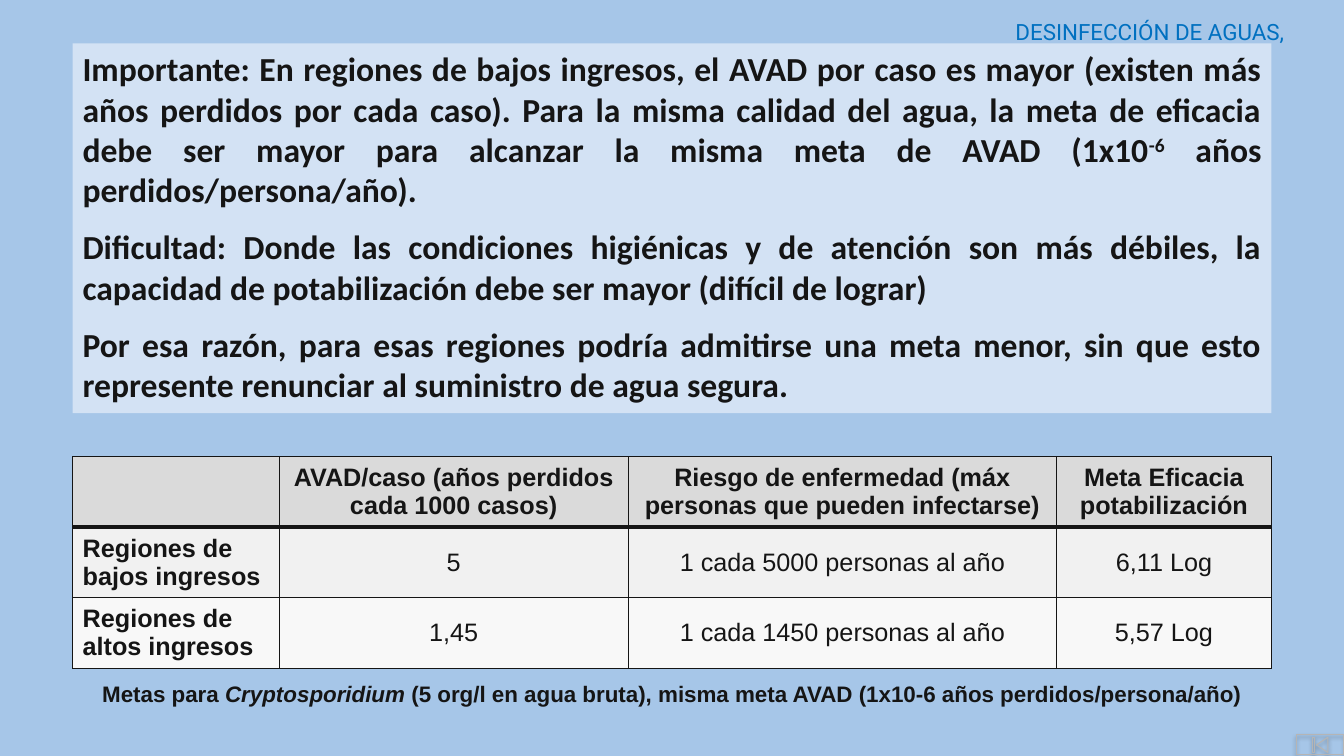
import pptx
import pptx.util
import pptx.dml.color
import pptx.enum.shapes
import pptx.enum.text
import pptx.oxml
import pptx.oxml.ns

Inches, Pt = pptx.util.Inches, pptx.util.Pt
ALIGN = pptx.enum.text.PP_ALIGN
MIDDLE = pptx.enum.text.MSO_ANCHOR.MIDDLE
SHAPE = pptx.enum.shapes.MSO_SHAPE
INK = "151515"
LEFT, WIDE = 0.72, 11.89

NOTES = [
    [("Importante: En regiones de bajos ingresos, el AVAD por caso es mayor "
      "(existen más años perdidos por cada caso). Para la misma calidad del agua, "
      "la meta de eficacia debe ser mayor para alcanzar la misma meta de AVAD (1x10", False),
     ("-6", True), (" años perdidos/persona/año).", False)],
    [("Dificultad: Donde las condiciones higiénicas y de atención son más débiles, "
      "la capacidad de potabilización debe ser mayor (difícil de lograr)", False)],
    [("Por esa razón, para esas regiones podría admitirse una meta menor, "
      "sin que esto represente renunciar al suministro de agua segura.", False)],
]
GOALS = [
    ["", "AVAD/caso (años perdidos cada 1000 casos)",
     "Riesgo de enfermedad (máx personas que pueden infectarse)",
     "Meta Eficacia potabilización"],
    ["Regiones de bajos ingresos", "5", "1 cada 5000 personas al año", "6,11 Log"],
    ["Regiones de altos ingresos", "1,45", "1 cada 1450 personas al año", "5,57 Log"],
]
COLS = [2.05, 3.46, 4.25, 2.13]
FILLS = ["DADADA", "F1F1F1", "F8F8F8"]
EDGES = [1, 3, 1, 1]  # horizontal rules, top to bottom


def color(code):
    return pptx.dml.color.RGBColor.from_string(code)


def paint(fill, code):
    fill.solid()
    fill.fore_color.rgb = color(code)


def add_run(para, text, size, face, code=INK, bold=False, italic=False):
    run = para.add_run()
    run.text = text
    font = run.font
    font.size, font.name, font.bold, font.italic = Pt(size), face, bold, italic
    font.color.rgb = color(code)
    return run


def add_line(slide, left, top, width, height):
    """Add a text box and return its centred first paragraph."""
    box = slide.shapes.add_textbox(*map(Inches, (left, top, width, height)))
    box.text_frame.word_wrap = True
    para = box.text_frame.paragraphs[0]
    para.alignment = ALIGN.CENTER
    return para


def add_header(slide, left, top, width, height):
    para = add_line(slide, left, top, width, height)
    add_run(para, "DESINFECCIÓN DE AGUAS,", 16, "Roboto", "0070C0")


def add_button(slide, left, top, width, height):
    shape = slide.shapes.add_shape(SHAPE.ACTION_BUTTON_BEGINNING,
                                   *map(Inches, (left, top, width, height)))
    shape.fill.background()
    shape.line.color.rgb = color("B5B5B5")
    shape.line.width = Pt(0.75)
    # Soft shadow below
    shape.shadow.inherit = False
    effects = shape.element.spPr.find(pptx.oxml.ns.qn("a:effectLst"))
    effects.append(pptx.oxml.parse_xml(
        f'<a:outerShdw {pptx.oxml.ns.nsdecls("a")} blurRad="{Pt(3.1)}" dist="{Pt(1.6)}" '
        'dir="5400000" rotWithShape="0"><a:srgbClr val="000000"><a:alpha val="38000"/>'
        '</a:srgbClr></a:outerShdw>'))


def add_panel(slide, left, top, width, height):
    shape = slide.shapes.add_shape(SHAPE.RECTANGLE,
                                   *map(Inches, (left, top, width, height)))
    shape.shadow.inherit = False
    paint(shape.fill, "D3E2F4")
    shape.line.fill.background()
    frame = shape.text_frame
    frame.word_wrap = True
    frame.vertical_anchor = pptx.enum.text.MSO_ANCHOR.TOP
    for i, note in enumerate(NOTES):
        para = frame.add_paragraph() if i else frame.paragraphs[0]
        para.alignment = ALIGN.JUSTIFY
        para.space_before = Pt(6 if i else 0)
        para.space_after = Pt(6)
        for text, raised in note:
            run = add_run(para, text, 24, "Calibri", bold=True)
            if raised:
                run.font._element.set("baseline", "30000")


def set_edges(cell, above, below):
    props = cell._tc.get_or_add_tcPr()
    for i, (side, width) in enumerate(zip("LRTB", (1, 1, above, below))):
        props.insert(i, pptx.oxml.parse_xml(
            f'<a:ln{side} {pptx.oxml.ns.nsdecls("a")} w="{Pt(width)}"><a:solidFill>'
            f'<a:srgbClr val="{INK}"/></a:solidFill></a:ln{side}>'))


def add_goals(slide, left, top, width, height):
    table = slide.shapes.add_table(len(GOALS), len(COLS),
                                   *map(Inches, (left, top, width, height))).table
    table.first_row = table.horz_banding = False
    for col, size in zip(table.columns, COLS):
        col.width = Inches(size)
    for r, row in enumerate(GOALS):
        table.rows[r].height = Inches(height / len(GOALS))
        for c, text in enumerate(row):
            cell = table.cell(r, c)
            paint(cell.fill, FILLS[r])
            set_edges(cell, EDGES[r], EDGES[r + 1])
            cell.vertical_anchor = MIDDLE
            para = cell.text_frame.paragraphs[0]
            para.alignment = ALIGN.LEFT if r and not c else ALIGN.CENTER
            if text:
                add_run(para, text, 18, "Arial", bold=r == 0 or c == 0)


def add_caption(slide, left, top, width, height):
    para = add_line(slide, left, top, width, height)
    for text, italic in [
            ("Metas para ", False), ("Cryptosporidium", True),
            (" (5 org/l en agua bruta), misma meta AVAD "
             "(1x10-6 años perdidos/persona/año)", False)]:
        add_run(para, text, 16, "Arial", bold=True, italic=italic)


def main():
    deck = pptx.Presentation()
    deck.slide_width, deck.slide_height = Inches(13.33), Inches(7.5)
    slide = deck.slides.add_slide(deck.slide_layouts[6])
    paint(slide.background.fill, "A6C6E8")
    add_button(slide, 12.86, 7.29, 0.47, 0.2)
    add_header(slide, 9.82, 0.13, 3.17, 0.37)
    add_panel(slide, LEFT, 0.43, WIDE, 3.67)
    add_goals(slide, LEFT, 4.53, WIDE, 2.1)
    add_caption(slide, LEFT, 6.7, WIDE, 0.37)
    deck.save("out.pptx")


if __name__ == "__main__":
    main()
